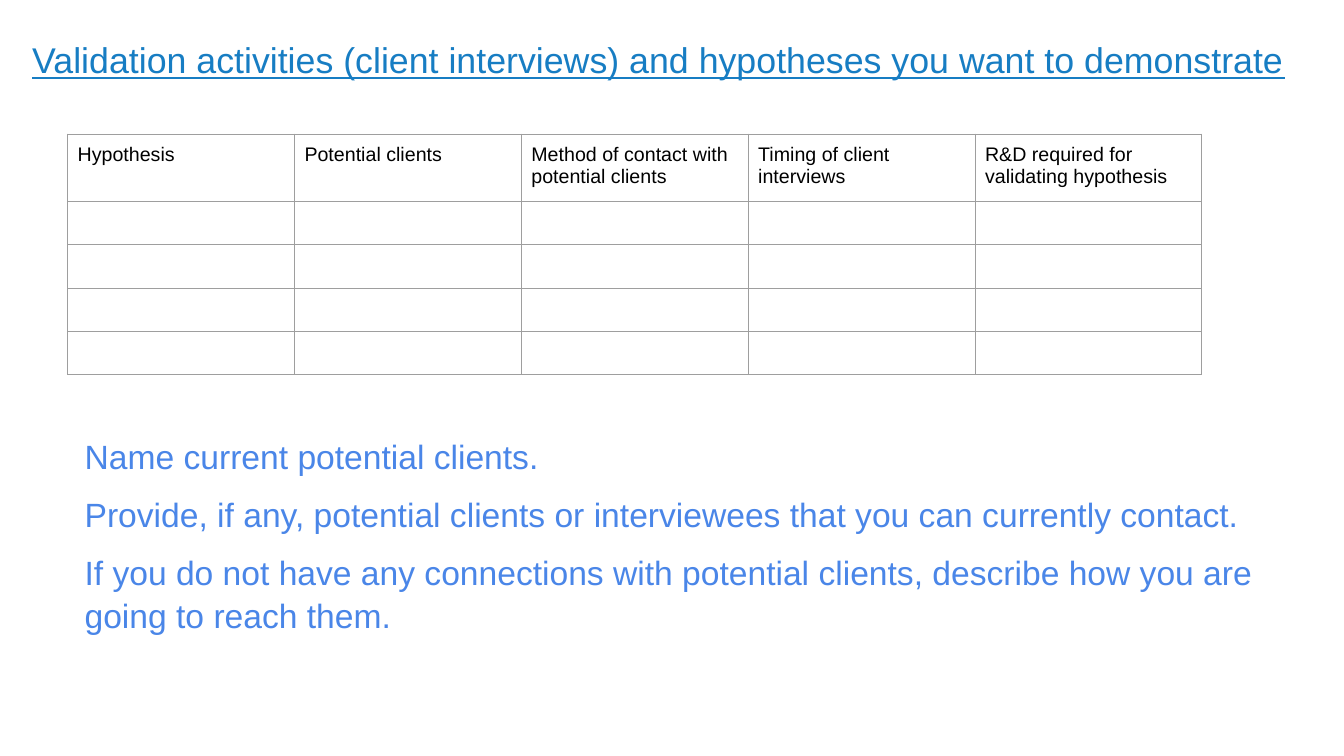
import pptx
import pptx.dml.color
import pptx.oxml
import pptx.oxml.ns
import pptx.util
from pptx.util import Inches


def color(hex_string):
    return pptx.dml.color.RGBColor.from_string(hex_string)


def write(frame, text, size, fill, underline=False, spacing=None, before=None):
    frame.word_wrap = True
    for index, line in enumerate(text.split("\n")):
        para = frame.add_paragraph() if index else frame.paragraphs[0]
        para.line_spacing = spacing
        if before:
            para.space_before = pptx.util.Pt(before)
        span = para.add_run()
        span.text = line
        span.font.name = "Arial"
        span.font.size = pptx.util.Pt(size)
        span.font.color.rgb = color(fill)
        span.font.underline = underline


deck = pptx.Presentation()
deck.slide_width = Inches(13.33)
deck.slide_height = Inches(7.5)
page = deck.slides.add_slide(deck.slide_layouts[6])

title = "Validation activities (client interviews) and hypotheses you want to demonstrate"
advice = """Name current potential clients.
Provide, if any, potential clients or interviewees that you can currently contact.
If you do not have any connections with potential clients, describe how you are going to reach them."""

text_boxes = [
    (title, (0.31, 0.37, 12.61, 0.44), 0.01,
     dict(size=25.5, fill="177DC3", underline=True)),
    (advice, (0.83, 4.18, 11.97, 2.28), 0.11,
     dict(size=24, fill="4A86E8", spacing=1.08, before=10.3)),
]
for text, place, top_inset, style in text_boxes:
    box = page.shapes.add_textbox(*[Inches(length) for length in place])
    frame = box.text_frame
    frame.margin_left = Inches(0.01)
    frame.margin_right = frame.margin_bottom = 0
    frame.margin_top = Inches(top_inset)
    write(frame, text, **style)

headings = [
    "Hypothesis",
    "Potential clients",
    "Method of contact with potential clients",
    "Timing of client interviews",
    "R&D required for validating hypothesis",
]
row_heights = [0.67] + [0.43] * 4
table = page.shapes.add_table(
    len(row_heights), len(headings),
    Inches(0.67), Inches(1.33), Inches(11.25), Inches(sum(row_heights)),
).table
table.first_row = False
table.horz_banding = False
for row, height in zip(table.rows, row_heights):
    row.height = Inches(height)

for cell in table.iter_cells():
    properties = cell._tc.get_or_add_tcPr()
    for side in ("lnL", "lnR", "lnT", "lnB"):
        properties.append(pptx.oxml.parse_xml(
            f'<a:{side} {pptx.oxml.ns.nsdecls("a")} w="{pptx.util.Pt(0.75)}">'
            f'<a:solidFill><a:srgbClr val="9E9E9E"/></a:solidFill></a:{side}>'
        ))
    cell.fill.solid()
    cell.fill.fore_color.rgb = color("FFFFFF")

for column, heading in enumerate(headings):
    cell = table.cell(0, column)
    cell.margin_left = cell.margin_right = Inches(0.1)
    cell.margin_top = cell.margin_bottom = Inches(0.1)
    write(cell.text_frame, heading, size=14, fill="000000")

deck.save("out.pptx")
